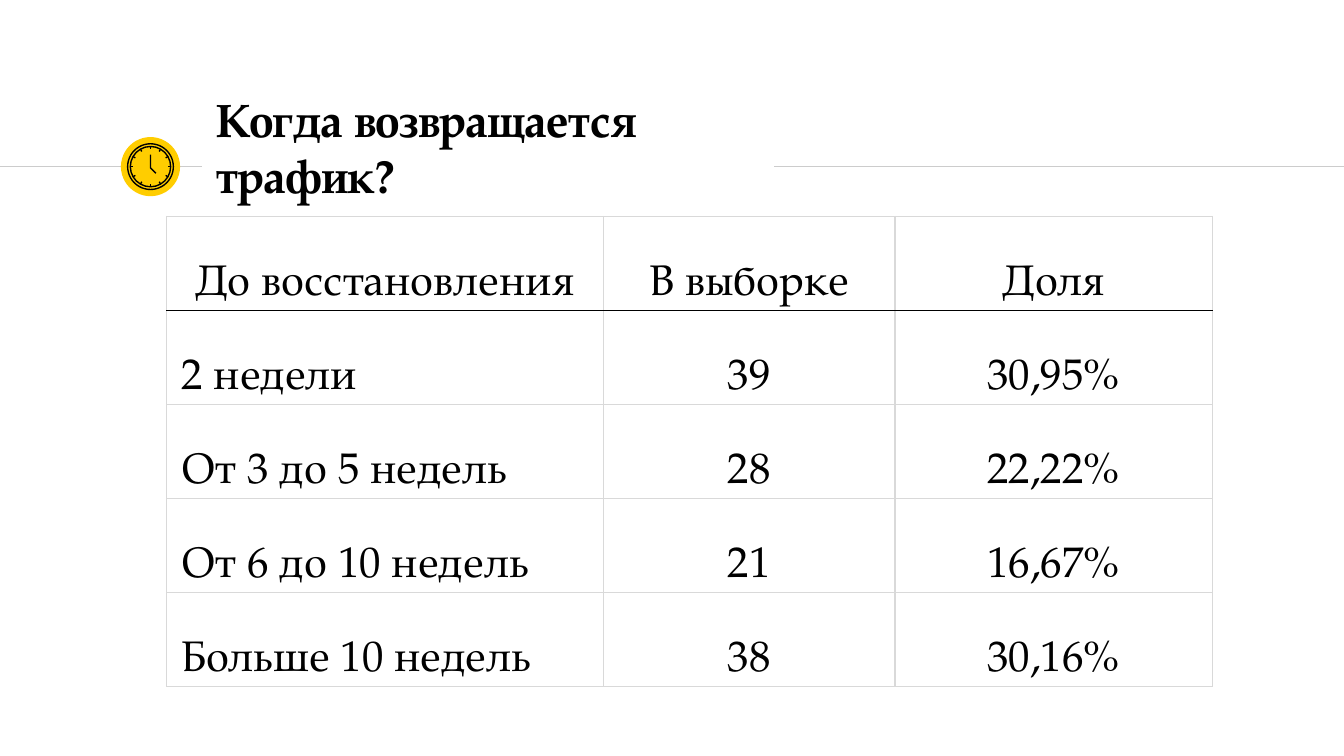
from dataclasses import dataclass
from math import cos, pi, sin

from lxml.etree import SubElement
from pptx import Presentation
from pptx.dml.color import RGBColor as RGB
from pptx.enum.shapes import MSO_CONNECTOR as Connector, MSO_SHAPE as Shape
from pptx.enum.text import MSO_ANCHOR as Anchor, PP_ALIGN as Align
from pptx.oxml import parse_xml
from pptx.oxml.ns import nsdecls, qn
from pptx.util import Inches, Pt


@dataclass(frozen=True)
class Theme:
    font: str = "TeX Gyre Pagella"
    ink: str = "000000"
    paper: str = "FFFFFF"
    rule: str = "CCCCCC"
    grid: str = "D9D9D9"
    accent: str = "FFCD00"
    title_size: int = 25
    table_size: int = 23
    stroke: float = 0.75


class SlideBuilder:
    def __init__(self, slide, theme):
        self.slide, self.theme = slide, theme
        background = slide.background.fill
        background.solid()
        background.fore_color.rgb = RGB.from_string(theme.paper)

    def style_line(self, line, color):
        line.color.rgb = RGB.from_string(color)
        line.width = Pt(self.theme.stroke)

    def line(self, start, end, color):
        rule = self.slide.shapes.add_connector(
            Connector.STRAIGHT, *map(Inches, start + end))
        self.style_line(rule.line, color)
        SubElement(rule._element.spPr, qn("a:effectLst"))

    def circle(self, center, radius, fill=None):
        x, y = center
        disc = self.slide.shapes.add_shape(
            Shape.OVAL, Inches(x - radius), Inches(y - radius),
            Inches(2 * radius), Inches(2 * radius))
        disc.shadow.inherit = False
        if fill:
            disc.fill.solid()
            disc.fill.fore_color.rgb = RGB.from_string(fill)
            disc.line.fill.background()
        else:
            disc.fill.background()
            self.style_line(disc.line, self.theme.ink)

    def polyline(self, points):
        first, *rest = [(Inches(x), Inches(y)) for x, y in points]
        outline = self.slide.shapes.build_freeform(*first)
        outline.add_line_segments(rest, close=False)
        path = outline.convert_to_shape()
        path.shadow.inherit = False
        path.fill.background()
        self.style_line(path.line, self.theme.ink)

    def run(self, paragraph, text, size, bold=False):
        run = paragraph.add_run()
        run.text = text
        run.font.name, run.font.size, run.font.bold = self.theme.font, Pt(size), bold
        run.font.color.rgb = RGB.from_string(self.theme.ink)

    def title(self, text, box):
        frame = self.slide.shapes.add_textbox(*map(Inches, box)).text_frame
        frame.word_wrap = True
        frame.vertical_anchor = Anchor.MIDDLE
        frame.margin_left = frame.margin_right = Inches(0.1)
        frame.margin_top = frame.margin_bottom = Inches(0.1)
        self.run(frame.paragraphs[0], text, self.theme.title_size, bold=True)

    def borders(self, cell, top, bottom):
        grid = self.theme.grid
        sides = {"L": grid, "R": grid, "T": top, "B": bottom}
        properties = cell._tc.get_or_add_tcPr()
        for position, (side, color) in enumerate(sides.items()):
            properties.insert(position, parse_xml(
                f'<a:ln{side} {nsdecls("a")} w="{Pt(self.theme.stroke)}">'
                f'<a:solidFill><a:srgbClr val="{color}"/></a:solidFill></a:ln{side}>'))

    def table(self, rows, left, top, widths, row_height):
        table = self.slide.shapes.add_table(
            len(rows), len(widths), Inches(left), Inches(top),
            Inches(sum(widths)), Inches(row_height * len(rows))).table
        table.first_row = table.horz_banding = False
        for column, width in zip(table.columns, widths):
            column.width = Inches(width)
        for r, values in enumerate(rows):
            table.rows[r].height = Inches(row_height)
            for c, value in enumerate(values):
                is_label = r > 0 and c == 0
                cell = table.cell(r, c)
                cell.fill.background()
                cell.vertical_anchor = Anchor.BOTTOM
                cell.margin_left = Inches(0.11 if is_label else 0.03)
                cell.margin_right = Inches(0.03)
                cell.margin_top = cell.margin_bottom = Inches(0.02)
                paragraph = cell.text_frame.paragraphs[0]
                paragraph.alignment = Align.LEFT if is_label else Align.CENTER
                paragraph.line_spacing = 1.15
                self.run(paragraph, value, self.theme.table_size)
                # The header is underlined in ink, the rest is a light grid
                self.borders(cell,
                             top=self.theme.ink if r == 1 else self.theme.grid,
                             bottom=self.theme.ink if r == 0 else self.theme.grid)

    def clock(self, center, rim, dial, tick):
        x, y = center
        self.circle(center, rim)
        self.circle(center, dial)
        self.polyline([(x, y - 0.09), (x, y + 0.01), (x + 0.04, y + 0.05)])
        for hour in range(12):
            dx, dy = sin(hour * pi / 6), -cos(hour * pi / 6)
            outer, inner = [(x + dx * reach, y + dy * reach)
                            for reach in (dial, dial - tick)]
            self.line(outer, inner, self.theme.ink)


def main():
    # Widescreen page, 16:9
    deck = Presentation()
    deck.slide_width = Inches(10)
    deck.slide_height = Inches(10 * 9 / 16)
    theme = Theme()
    page = SlideBuilder(deck.slides.add_slide(deck.slide_layouts[6]), theme)

    # Heading rule with the badge on it
    axis = 1.24
    badge_center = (1.12, axis)
    page.line((0, axis), (1.5, axis), theme.rule)
    page.circle(badge_center, 0.22, theme.accent)
    page.line((5.76, axis), (10, axis), theme.rule)
    page.title("Когда возвращается трафик?", (1.51, 0.85, 4.24, 0.48))

    # Recovery times
    recovery = [
        ("До восстановления", "В выборке", "Доля"),
        ("2 недели", "39", "30,95%"),
        ("От 3 до 5 недель", "28", "22,22%"),
        ("От 6 до 10 недель", "21", "16,67%"),
        ("Больше 10 недель", "38", "30,16%"),
    ]
    page.table(recovery, 1.24, 1.61, (3.25, 2.17, 2.36), 0.7)

    # Clock icon
    page.clock(badge_center, rim=0.17, dial=0.15, tick=0.02)

    deck.save("out.pptx")


if __name__ == "__main__":
    main()
